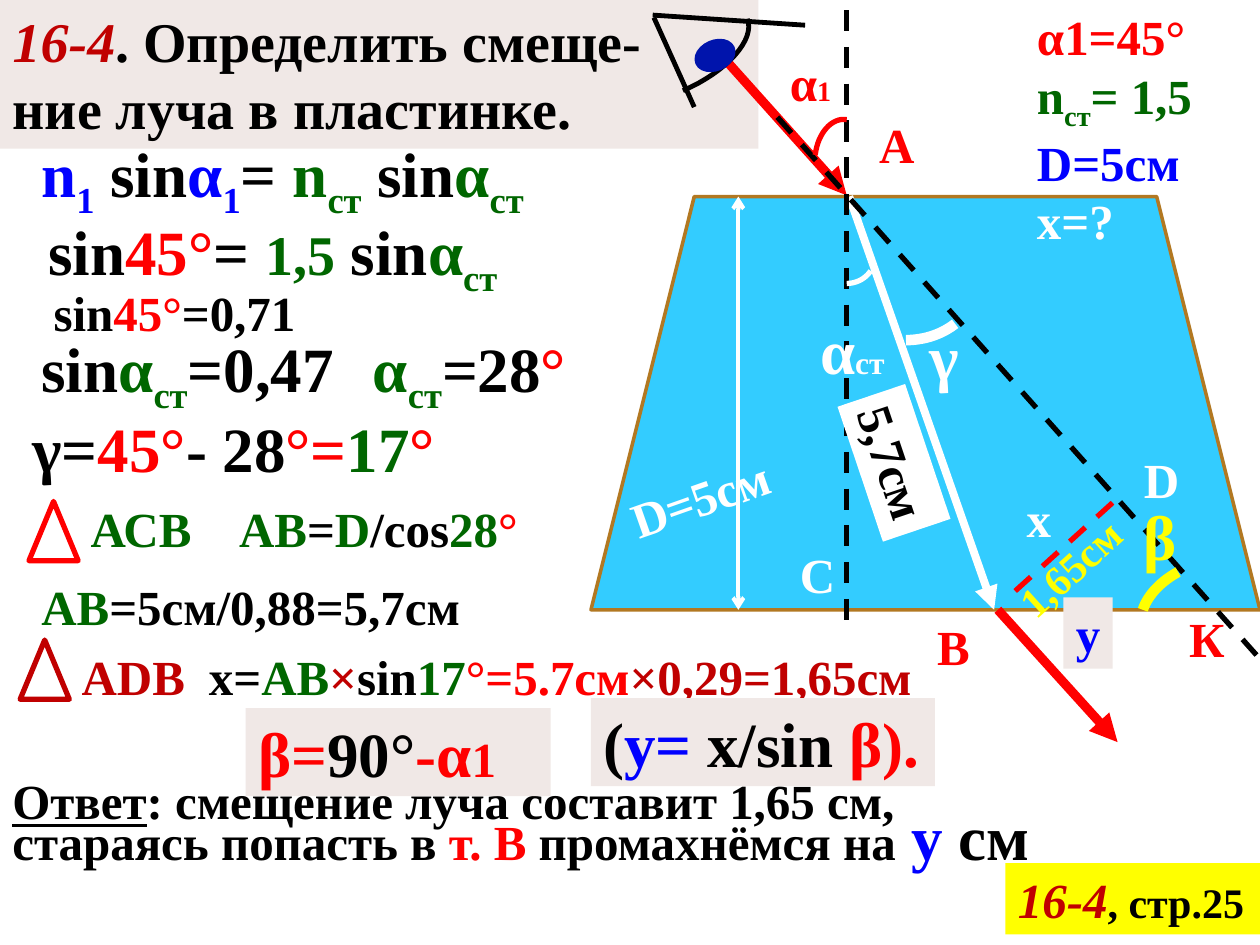
"""Build a physics slide on the displacement of a light ray in a glass plate."""
import pptx
import pptx.dml.color
import pptx.enum.dml
import pptx.enum.shapes
import pptx.enum.text
import pptx.oxml
import pptx.oxml.ns
import pptx.util

Inches, Pt = pptx.util.Inches, pptx.util.Pt
SHAPES = pptx.enum.shapes.MSO_SHAPE
ANCHORS = pptx.enum.text.MSO_ANCHOR
FONT = "Times New Roman"
BLACK, WHITE, RED, DARK_RED = "000000", "FFFFFF", "FF0000", "C00000"
GREEN, BLUE, YELLOW, PALE = "006600", "0000FF", "FFFF00", "F0E8E6"
SUB = {"sub": True}
UNDERLINE, ITALIC = {"underline": True}, {"italic": True}

TITLE = [
    [("16-4", DARK_RED, ITALIC), (". Определить смеще-", BLACK)],
    [("ние луча в пластинке.", BLACK)],
]
GIVEN = [
    [("α1=45°", RED)],
    [("n", GREEN), ("ст", GREEN, SUB), ("= 1,5", GREEN)],
    [("D=5см", BLUE)],
    [("x=?", WHITE)],
]
ANSWER = [
    [("Ответ", BLACK, UNDERLINE), (": смещение луча составит 1,65 см,", BLACK)],
    [("стараясь попасть в ", BLACK), ("т. В ", RED), ("промахнёмся на", BLACK),
     (" y", BLUE, {"size": 36}), (" см", BLACK, {"size": 36})],
]
# left, top, width, size, runs, format
FORMULAS = [
    (0.23, 1.02, 4.43, 36, [
        ("n", BLUE), ("1", BLUE, SUB), (" sin", BLACK), ("α", BLUE), ("1", BLUE, SUB), ("= ", BLACK),
        ("n", GREEN), ("ст", GREEN, SUB), (" sin", BLACK), ("α", GREEN), ("ст", GREEN, SUB)], {"wrap": False}),
    (0.16, 1.64, 4, 36, [
        (" sin", BLACK), ("45°", RED), ("= ", BLACK), ("1,5", GREEN, {"size": 32}),
        (" sin", BLACK), ("α", GREEN), ("ст", GREEN, SUB)], {"wrap": False}),
    (0.23, 2.19, 2.24, 28, [(" sin", BLACK), ("45°", RED), ("=0,71", BLACK)], {"wrap": False}),
    (0.23, 2.57, 2.62, 36, [
        ("sin", BLACK), ("α", GREEN), ("ст", GREEN, SUB), ("=0,47", BLACK)], {"wrap": False}),
    (2.86, 2.57, 1.83, 36, [
        ("α", GREEN), ("ст", GREEN, SUB), ("=28", BLACK), ("°", RED)], {"wrap": False}),
    (0.16, 3.2, 3.67, 36, [
        ("γ=", BLACK), ("45°", RED), ("- 28", BLACK), ("°=", RED), ("17", GREEN), ("°", RED)], {}),
    (0.62, 3.91, 1.01, 28, [("АСВ", GREEN)], {"wrap": False}),
    (1.8, 3.91, 2.5, 28, [
        ("АВ", GREEN), ("=", BLACK), ("D", GREEN), ("/cos", BLACK), ("28", GREEN), ("°", RED)], {}),
    (0.23, 4.53, 3.67, 28, [("АВ", GREEN), ("=5cм/0,88=5,7см", BLACK)], {}),
    (0.55, 5.08, 1.03, 28, [("АDВ", DARK_RED)], {"wrap": False}),
    (1.56, 5.08, 6.02, 28, [
        ("x=", BLACK), ("АВ", GREEN), ("×", DARK_RED), ("sin", BLACK), ("17", GREEN),
        ("°=5.7см", RED), ("×0,29=1,65см", DARK_RED)], {}),
    (1.95, 5.62, 2.42, 36, [
        ("β=", RED), ("90°", BLACK), ("-α", RED), ("1", RED, {"size": 28})], {"fill": PALE}),
    (4.69, 5.54, 2.73, 36, [
        ("(", BLACK), ("y=", BLUE), (" x/sin", BLACK), (" β).", RED)], {"fill": PALE, "wrap": False}),
    (7.98, 6.85, 2.02, 28, [
        ("16-4", DARK_RED, ITALIC), (", стр.25", BLACK, {"size": 24})], {"fill": YELLOW, "wrap": False}),
]
LABELS = [
    (6.17, 0.37, 0.63, 28, [("α", RED), ("1", RED, {"size": 16})], {}),
    (6.41, 2.42, 0.78, 36, [("α", WHITE), ("ст", WHITE, {"size": 18})], {}),
    (4.89, 3.66, 1.35, 28, [("D=5см", WHITE)], {"rotation": 340.6, "wrap": False}),
    (6.88, 0.86, 0.63, 28, [("A", RED)], {}),
    (7.34, 4.84, 0.63, 28, [("B", RED)], {}),
    (6.25, 4.27, 0.47, 28, [("C", WHITE)], {}),
    (8.98, 3.52, 0.47, 28, [("D", WHITE)], {}),
    (8.05, 3.83, 0.39, 28, [("x", WHITE)], {}),
    (8.44, 4.74, 0.39, 28, [("y", BLUE)], {"fill": PALE}),
    (7.28, 2.47, 0.55, 36, [("γ", WHITE)], {}),
    (7.91, 4.25, 1.17, 24, [("1,65см", YELLOW)], {"rotation": 317.8, "wrap": False}),
    (6.53, 3.39, 1.13, 28, [("5,7см", BLACK)], {"rotation": 71.4, "wrap": False, "fill": WHITE}),
    (8.98, 3.9, 0.55, 36, [("β", YELLOW)], {}),
    (9.34, 4.78, 0.63, 28, [("К", RED)], {}),
]
# start, end, colour, width, format
LINES = [
    ((5.78, 0.5), (6.72, 1.55), RED, 5.25, {"tail": "triangle"}),
    ((6.74, 1.56), (7.89, 4.84), WHITE, 4.5, {"tail": "triangle"}),
    ((6.72, 0.08), (6.72, 5), BLACK, 3, {"dashed": True}),
    ((7.92, 4.84), (8.87, 5.89), RED, 5.25, {"tail": "triangle"}),
    ((6.17, 0.93), (10, 5.23), BLACK, 3, {"dashed": True}),
    ((5.86, 1.56), (5.86, 4.84), WHITE, 2.25, {"head": "arrow", "tail": "arrow"}),
    ((8.83, 3.99), (7.97, 4.77), RED, 3, {"dashed": True}),
    ((5.19, 0.14), (5.51, 0.85), BLACK, 2.75, {}),
    ((5.18, 0.12), (6.39, 0.2), BLACK, 2.75, {}),
]
# four Bezier points, colour, width
ARCS = [
    (((6.72, 2.25), (6.8, 2.25), (6.87, 2.21), (6.91, 2.15)), WHITE, 3),
    (((6.47, 1.23), (6.49, 1.06), (6.6, 0.93), (6.72, 0.95)), RED, 3),
    (((7.19, 2.7), (7.34, 2.7), (7.48, 2.65), (7.58, 2.57)), WHITE, 6),
    (((9.35, 4.54), (9.22, 4.61), (9.11, 4.72), (9.07, 4.84)), YELLOW, 6),
    (((5.93, 0.15), (6, 0.31), (5.77, 0.57), (5.42, 0.72)), BLACK, 2.75),
]


def paint(target, colour):
    if hasattr(target, "solid"):
        target.solid()
        target = target.fore_color
    else:
        target = target.color
    target.rgb = pptx.dml.color.RGBColor.from_string(colour)


def place(shape, left, top, width, height):
    shape.left, shape.top = Inches(left), Inches(top)
    shape.width, shape.height = Inches(width), Inches(height)


def write(shape, paragraphs, size=28, wrap=True, fill=None, rotation=0, anchor=ANCHORS.TOP, spacing=None):
    frame = shape.text_frame
    frame.word_wrap, frame.vertical_anchor = wrap, anchor
    frame.auto_size = pptx.enum.text.MSO_AUTO_SIZE.SHAPE_TO_FIT_TEXT
    shape.rotation = rotation
    if fill:
        paint(shape.fill, fill)
    for index, runs in enumerate(paragraphs):
        paragraph = frame.add_paragraph() if index else frame.paragraphs[0]
        paragraph.alignment = pptx.enum.text.PP_ALIGN.LEFT
        paragraph.space_before = Pt(0)
        if spacing:
            paragraph.line_spacing = Pt(spacing)
        for text, colour, *extra in runs:
            style = extra[0] if extra else {}
            run = paragraph.add_run()
            run.text = text
            font = run.font
            font.name, font.size, font.bold = FONT, Pt(style.get("size", size)), True
            font.italic, font.underline = style.get("italic"), style.get("underline")
            paint(font, colour) if not hasattr(font, "fill") else paint(font.fill, colour)
            if style.get("sub"):
                run._r.get_or_add_rPr().set("baseline", "-25000")


def add_text(slide, left, top, width, size, runs, options):
    height = size * 1.2 / 72 + 0.1
    box = slide.shapes.add_textbox(*map(Inches, (left, top, width, height)))
    write(box, [runs], size=size, **options)


def outline(shape, colour, width, fill=None):
    shape.shadow.inherit = False
    paint(shape.line.fill, colour)
    shape.line.width = Pt(width)
    if fill:
        paint(shape.fill, fill)
    else:
        shape.fill.background()


def add_figure(slide, kind, box, colour, width, fill=None):
    shape = slide.shapes.add_shape(kind, *map(Inches, box))
    outline(shape, colour, width, fill)
    return shape


def add_line(slide, start, end, colour, width, head=None, tail=None, dashed=False):
    straight = pptx.enum.shapes.MSO_CONNECTOR.STRAIGHT
    connector = slide.shapes.add_connector(straight, *map(Inches, start + end))
    paint(connector.line.fill, colour)
    connector.line.width = Pt(width)
    if dashed:
        connector.line.dash_style = pptx.enum.dml.MSO_LINE.DASH
    namespace = pptx.oxml.ns.nsdecls("a")
    for tag, kind in (("headEnd", head), ("tailEnd", tail)):
        if kind:
            end_mark = pptx.oxml.parse_xml(f'<a:{tag} {namespace} type="{kind}"/>')
            connector.line._get_or_add_ln().append(end_mark)
    connector._element.spPr.append(pptx.oxml.parse_xml(f"<a:effectLst {namespace}/>"))


def add_arc(slide, points, colour, width, steps=16):
    curve = []
    for step in range(steps + 1):
        t = step / steps
        weights = ((1 - t) ** 3, 3 * t * (1 - t) ** 2, 3 * t * t * (1 - t), t ** 3)
        curve.append(tuple(Inches(sum(w * p[axis] for w, p in zip(weights, points))) for axis in (0, 1)))
    builder = slide.shapes.build_freeform(*curve[0])
    builder.add_line_segments(curve[1:], close=False)
    outline(builder.convert_to_shape(), colour, width)


def main():
    presentation = pptx.Presentation()
    presentation.slide_width, presentation.slide_height = Inches(10), Inches(7.5)
    slide = presentation.slides.add_slide(presentation.slide_layouts[1])
    title, given = slide.shapes.title, slide.placeholders[1]
    place(title, 0, 0, 6.02, 1.18)
    write(title, TITLE, size=32, fill=PALE)

    add_figure(slide, SHAPES.TRAPEZOID, (4.69, 1.56, 5.31, 3.28), "B27822", 2, "33CCFF")
    for line in LINES:
        add_line(slide, *line[:4], **line[4])
    for arc in ARCS:
        add_arc(slide, *arc)
    pupil = add_figure(slide, SHAPES.OVAL, (5.57, 0.29, 0.21, 0.3), "0014AC", 2.75, "0014AC")
    pupil.rotation = 246.3
    for left, top, colour in ((0.23, 3.98, RED), (0.16, 5.08, DARK_RED)):
        add_figure(slide, SHAPES.ISOSCELES_TRIANGLE, (left, top, 0.39, 0.47), colour, 3)

    place(given, 8.13, 0, 1.87, 1.99)
    write(given, GIVEN)
    for paragraph in given.text_frame.paragraphs:
        properties = paragraph._p.get_or_add_pPr()
        properties.set("marL", "0")
        properties.set("indent", "0")
        properties.append(pptx.oxml.parse_xml(f'<a:buNone {pptx.oxml.ns.nsdecls("a")}/>'))
    slide.shapes._spTree.append(given._element)

    answer = slide.shapes.add_textbox(*map(Inches, (0, 6.17, 10, 0.83)))
    write(answer, ANSWER, anchor=ANCHORS.MIDDLE, spacing=25)
    for text in LABELS + FORMULAS:
        add_text(slide, *text)
    presentation.save("out.pptx")


if __name__ == "__main__":
    main()
